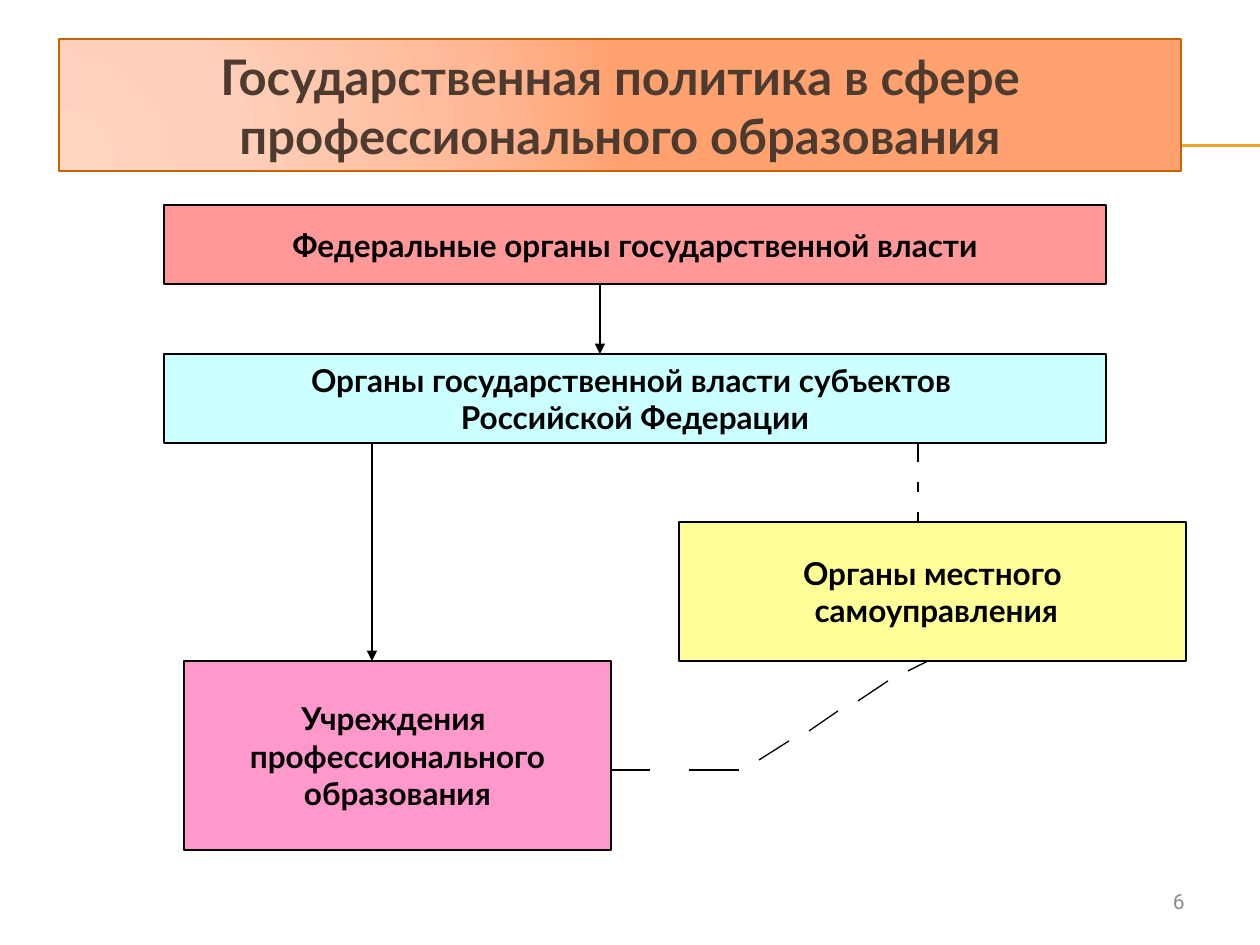
import pptx
import pptx.util
import pptx.dml.color
import pptx.enum.shapes
import pptx.enum.text
import pptx.oxml
import pptx.oxml.ns

PX = 914400 // 126
HUE = {
    "ink": "000000", "gold": "F0A22E", "gray": "8C8C8C", "brown": "4E3B30",
    "rust": "C66403", "red": "FF9999", "cyan": "CCFFFF", "lemon": "FFFF99",
    "pink": "FF99CC",
}
FADE = [(0, "FFD4C1"), (30, "FFD0BB"), (75, "FFB896"), (100, "FFA270")]
MID = pptx.enum.text.MSO_ANCHOR.MIDDLE
ALIGN = pptx.enum.text.PP_ALIGN
RECT = pptx.enum.shapes.MSO_SHAPE.RECTANGLE
STRAIGHT = pptx.enum.shapes.MSO_CONNECTOR.STRAIGHT
NS = pptx.oxml.ns.nsdecls("a")

deck = pptx.Presentation()
deck.slide_width = pptx.util.Inches(10)
deck.slide_height = pptx.util.Inches(7.5)
slide = deck.slides.add_slide(deck.slide_layouts[6])
shapes = slide.shapes


def write(shape, lines, size, hue, face="Lato", bold=True, align=ALIGN.CENTER):
    frame = shape.text_frame
    frame.vertical_anchor = MID
    frame.text = "\n".join(lines)
    for para in frame.paragraphs:
        para.alignment = align
        para.font.size = pptx.util.Pt(size)
        para.font.name = face
        para.font.bold = bold
        para.font.color.rgb = pptx.dml.color.RGBColor.from_string(HUE[hue])


def draw(x1, y1, x2, y2, hue="ink", arrow=False):
    line = shapes.add_connector(STRAIGHT, x1 * PX, y1 * PX, x2 * PX, y2 * PX)
    line.line.color.rgb = pptx.dml.color.RGBColor.from_string(HUE[hue])
    line.line.width = pptx.util.Pt(0.75)
    if arrow:
        line.line._get_or_add_ln().append(
            pptx.oxml.parse_xml(f'<a:tailEnd {NS} type="triangle"/>'))
    line._element.spPr.append(pptx.oxml.parse_xml(f"<a:effectLst {NS}/>"))


for y in (145, 146):
    draw(71, y, 1260, y, "gold")

page = shapes.add_textbox(903 * PX, 876 * PX, 294 * PX, 50 * PX)
page.text_frame.word_wrap = True
write(page, ["6"], 12, "gray", "Roboto", False, ALIGN.RIGHT)

boxes = [
    (164, 205, 942, 79, "red", ["Федеральные органы государственной власти"]),
    (164, 354, 942, 89, "cyan",
     ["Органы государственной власти субъектов ", "Российской Федерации"]),
    (679, 522, 507, 139, "lemon", ["Органы местного", " самоуправления"]),
    (184, 661, 427, 189, "pink",
     ["Учреждения ", "профессионального", "образования"]),
]
for x, y, w, h, hue, lines in boxes:
    box = shapes.add_shape(RECT, x * PX, y * PX, w * PX, h * PX)
    box.shadow.inherit = False
    box.fill.solid()
    box.fill.fore_color.rgb = pptx.dml.color.RGBColor.from_string(HUE[hue])
    box.line.color.rgb = pptx.dml.color.RGBColor.from_string(HUE["ink"])
    box.line.width = pptx.util.Pt(0.75)
    box.text_frame.word_wrap = False
    write(box, lines, 18, "ink")

for x, top, end in [(600, 284, 354), (372, 443, 661)]:
    draw(x, top, x, end, arrow=True)

for top, end in [(443, 462), (482, 492), (512, 522)]:
    draw(918, top, 918, end)

for dash in [(928, 661, 908, 671), (888, 681, 858, 701), (838, 711, 809, 731),
             (789, 741, 759, 760), (610, 770, 650, 770), (689, 770, 739, 770)]:
    draw(*dash)

title = shapes.add_shape(RECT, 59 * PX, 39 * PX, 1122 * PX, 132 * PX)
title.shadow.inherit = False
title.line.color.rgb = pptx.dml.color.RGBColor.from_string(HUE["rust"])
title.line.width = pptx.util.Pt(1)
stops = "".join(
    f'<a:gs pos="{pos * 1000}"><a:srgbClr val="{tone}"/></a:gs>'
    for pos, tone in FADE)
title._element.spPr.find(pptx.oxml.ns.qn("a:prstGeom")).addnext(
    pptx.oxml.parse_xml(
        f'<a:gradFill {NS} rotWithShape="1"><a:gsLst>{stops}</a:gsLst>'
        '<a:path path="circle"><a:fillToRect l="5000" t="100000" '
        'r="120000" b="10000"/></a:path></a:gradFill>'))
title.text_frame.word_wrap = True
write(title, ["Государственная политика в сфере профессионального образования"],
      28, "brown")

deck.save("out.pptx")
